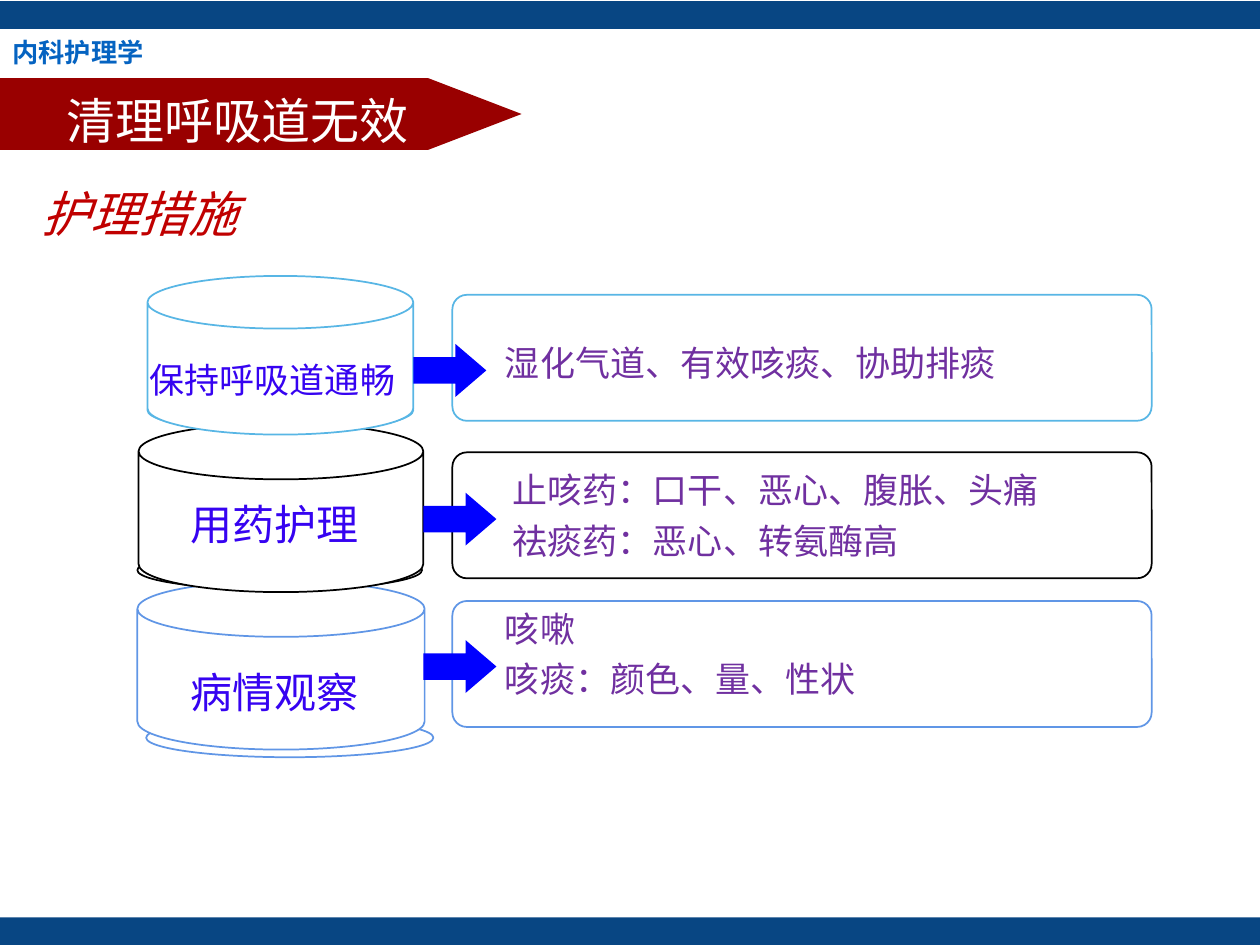
from dataclasses import dataclass

from lxml.etree import SubElement
from pptx import Presentation
from pptx.dml.color import RGBColor as Rgb
from pptx.enum.shapes import MSO_SHAPE as Kind
from pptx.enum.text import MSO_ANCHOR as Anchor, MSO_AUTO_SIZE as Fit, PP_ALIGN as Align
from pptx.oxml.ns import qn
from pptx.util import Inches, Pt


@dataclass(frozen=True)
class Theme:
    font: str = "Noto Sans CJK SC"
    brand_font: str = "Arial"
    bar: str = "084683"
    brand: str = "0563C1"
    flag: str = "990000"
    head: str = "C00000"
    arrow: str = "0000FF"
    label: str = "3603F1"
    note: str = "7030A0"
    white: str = "FFFFFF"
    sky: str = "58B6E5"
    black: str = "000000"
    blue: str = "6096E6"
    brand_size: int = 15
    title_size: int = 28
    label_size: int = 24
    note_size: int = 20


@dataclass(frozen=True)
class Row:
    """One measure: places are left, top, width, height in inches."""
    label: str
    label_at: tuple
    label_size: int
    notes: tuple
    note_at: tuple
    inset: float
    color: str
    base: tuple
    can: tuple
    box_top: float
    arrow: tuple


def write(frame, lines, size, color, font, bold=False, italic=False,
          align=Align.LEFT, gap=0, lead=1.0, inset=0.1, wrap=True):
    """Fill a text frame with one paragraph per line; gap is points between them."""
    frame.word_wrap = wrap
    frame.auto_size = Fit.NONE
    frame.margin_left = Inches(inset)
    for i, line in enumerate(lines):
        para = frame.add_paragraph() if i else frame.paragraphs[0]
        para.alignment = align
        para.line_spacing = lead
        para.space_before = Pt(gap if i else 0)
        run = para.add_run()
        run.text = line
        run.font.size = Pt(size)
        run.font.bold = bold
        run.font.italic = italic
        run.font.color.rgb = Rgb.from_string(color)
        run.font.name = font
        SubElement(run.font._element, qn("a:ea"), typeface=font)


class Deck:
    def __init__(self, theme):
        self.theme = theme
        self.prs = Presentation()
        self.prs.slide_width = Inches(10)
        self.prs.slide_height = Inches(7.5)
        self.slide = self.prs.slides.add_slide(self.prs.slide_layouts[5])

    def shape(self, kind, at, fill, line=None, adjust=(), host=None):
        host = host or self.slide
        item = host.shapes.add_shape(kind, *map(Inches, at))
        item.shadow.inherit = False
        item.fill.solid()
        item.fill.fore_color.rgb = Rgb.from_string(fill)
        if line:
            item.line.color.rgb = Rgb.from_string(line)
            item.line.width = Pt(1)
        else:
            item.line.fill.background()
        for i, value in enumerate(adjust):
            item.adjustments[i] = value

    def text(self, at, *lines, **style):
        box = self.slide.shapes.add_textbox(*map(Inches, at))
        write(box.text_frame, lines, **{"font": self.theme.font, **style})

    def title(self, text):
        t = self.theme
        self.shape(Kind.PENTAGON, (0, 0.62, 4.14, 0.57), t.flag, adjust=[1.302])
        item = self.slide.shapes.title
        item.left, item.top, item.width, item.height = map(Inches, (0, 0.67, 3.77, 0.57))
        write(item.text_frame, [text], t.title_size, t.white, t.font, align=Align.CENTER)
        item.text_frame.vertical_anchor = Anchor.MIDDLE
        # Bring the title in front of its flag
        self.slide.shapes._spTree.append(item._element)

    def drum(self, row):
        """Draw a cylinder with the ellipse that shows below it."""
        group = self.slide.shapes.add_group_shape()
        white = self.theme.white
        self.shape(Kind.OVAL, row.base, white, row.color, host=group)
        self.shape(Kind.CAN, row.can, white, row.color, [0.332], group)

    def panel(self, row):
        t = self.theme
        self.shape(Kind.ROUNDED_RECTANGLE, (3.59, row.box_top, 5.55, 1),
                   t.white, row.color, [0.115])
        self.text(row.note_at, *row.notes, size=t.note_size, color=t.note,
                  gap=5, inset=row.inset)

    def arrow(self, row):
        self.shape(Kind.RIGHT_ARROW, (*row.arrow, 0.58, 0.42), self.theme.arrow,
                   adjust=[0.5, 0.583])

    def label(self, row):
        self.text(row.label_at, row.label, size=row.label_size,
                  color=self.theme.label, lead=1.2, wrap=False)


def main():
    t = Theme()
    rows = [
        Row("保持呼吸道通畅", (1.09, 2.73, 2.16, 0.45), t.note_size,
            ("湿化气道、有效咳痰、协助排痰",), (3.91, 2.66, 4.53, 0.44), 0.1,
            t.sky, (1.17, 3.08, 2.11, 0.35), (1.17, 2.19, 2.11, 1.26),
            2.34, (3.28, 2.73)),
        Row("用药护理", (1.41, 3.83, 1.55, 0.52), t.label_size,
            ("止咳药：口干、恶心、腹胀、头痛", "祛痰药：恶心、转氨酶高"),
            (3.91, 3.67, 4.77, 0.94), 0.16,
            t.black, (1.09, 4.37, 2.26, 0.31), (1.1, 3.36, 2.26, 1.34),
            3.59, (3.36, 3.91)),
        Row("病情观察", (1.41, 5.16, 1.55, 0.52), t.label_size,
            ("咳嗽", "咳痰：颜色、量、性状"), (3.91, 4.77, 3.84, 0.94), 0.1,
            t.blue, (1.16, 5.7, 2.28, 0.31), (1.09, 4.61, 2.28, 1.34),
            4.77, (3.36, 5.08)),
    ]

    deck = Deck(t)
    for top in (0.01, 7.28):
        deck.shape(Kind.RECTANGLE, (0, top, 10, 0.22), t.bar)
    deck.text((0, 0.24, 2.01, 0.35), "内科护理学", size=t.brand_size,
              color=t.brand, font=t.brand_font, bold=True)
    for row in reversed(rows):
        deck.drum(row)
    for draw in (deck.panel, deck.arrow, deck.label):
        for row in rows:
            draw(row)
    deck.title("清理呼吸道无效")
    deck.text((0.23, 1.41, 1.95, 0.57), "护理措施", size=t.title_size,
              color=t.head, italic=True)
    deck.prs.save("out.pptx")


if __name__ == "__main__":
    main()
